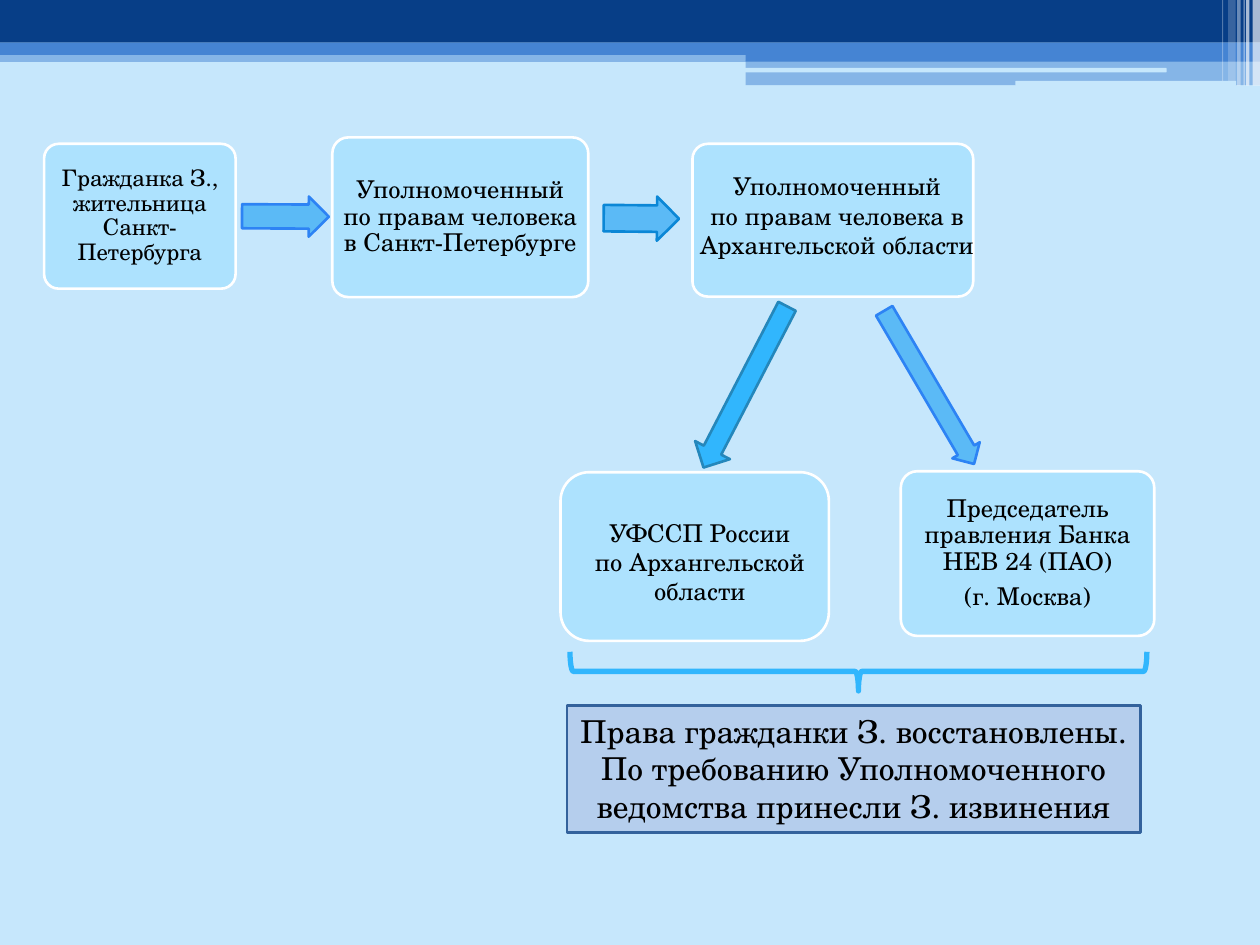
from lxml import etree
from pptx import Presentation
from pptx.dml.color import RGBColor
from pptx.enum.shapes import MSO_SHAPE as Shape
from pptx.enum.text import MSO_ANCHOR as Anchor, PP_ALIGN as Align
from pptx.oxml.ns import qn
from pptx.util import Cm, Pt

FONT = "TeX Gyre Schola"
BLACK = RGBColor(0x00, 0x00, 0x00)
WHITE = RGBColor(0xFF, 0xFF, 0xFF)
SKY = RGBColor(0xC6, 0xE7, 0xFC)
NAVY = RGBColor(0x07, 0x3E, 0x87)
BLUE = RGBColor(0x45, 0x84, 0xD3)
CARD = RGBColor(0xAD, 0xE2, 0xFE)
ARROW = RGBColor(0x5B, 0xBA, 0xF6)
ARROW_EDGE = RGBColor(0x2D, 0x83, 0xF4)
ARROW_EDGE_DARK = RGBColor(0x0B, 0x87, 0xD6)
CYAN = RGBColor(0x31, 0xB6, 0xFD)
CYAN_EDGE = RGBColor(0x24, 0x87, 0xBB)
RESULT = RGBColor(0xB5, 0xCE, 0xED)
RESULT_EDGE = RGBColor(0x33, 0x62, 0x9C)


def add_figure(slide, kind, box, fill=None, edge=None, weight=1.5, opacity=100):
    figure = slide.shapes.add_shape(kind, *map(Cm, box))
    figure.shadow.inherit = False
    if fill is None:
        figure.fill.background()
    else:
        figure.fill.solid()
        figure.fill.fore_color.rgb = fill
    if opacity < 100:
        color = figure.fill._xPr.find(qn("a:solidFill"))[0]
        etree.SubElement(color, qn("a:alpha")).set("val", str(opacity * 1000))
    if edge is None:
        figure.line.fill.background()
    else:
        figure.line.color.rgb = edge
        figure.line.width = Pt(weight)
    return figure


def write(frame, lines, size, margin=None, spacing=None, after=None, wrap=True):
    frame.text = "\n".join(lines)
    frame.word_wrap = wrap
    if margin is not None:
        frame.margin_left = frame.margin_right = Cm(margin)
        frame.margin_top = frame.margin_bottom = Cm(margin)
    for paragraph in frame.paragraphs:
        paragraph.alignment = Align.CENTER
        if spacing:
            paragraph.line_spacing = spacing
        if after:
            paragraph.space_after = Pt(after)
        for run in paragraph.runs:
            run.font.name = FONT
            run.font.size = Pt(size)
            run.font.color.rgb = BLACK


def add_header(slide, left, top, width):
    right = left + width
    bands = [
        (0, 1.02, width, 0.23, BLUE, 50),
        (0, 0, width, 0.86, NAVY, 100),
        (0, 0.86, width, 0.25, BLUE, 100),
        (15.03, 0.99, 10.37, 0.25, BLUE, 100),
        (15.03, 1.22, 10.37, 0.5, BLUE, 50),
    ]
    for x, y, w, h, color, opacity in bands:
        add_figure(slide, Shape.RECTANGLE, (left + x, top + y, w, h), color, opacity=opacity)
    for x, y, w, h in [(15.01, 1.37, 8.51, 0.09), (20.47, 1.63, 4.45, 0.1)]:
        add_figure(slide, Shape.ROUNDED_RECTANGLE, (left + x, top + y, w, h), SKY)
    stripes = [
        (0.15, 0.15, 1.73, 65), (0.28, 0.07, 1.73, 65), (0.33, 0.02, 1.73, 60),
        (0.46, 0.07, 1.73, 40), (0.64, 0.15, 1.63, 20), (0.76, 0.02, 1.63, 30),
    ]
    for inset, w, h, opacity in stripes:
        add_figure(slide, Shape.RECTANGLE, (right - inset, top, w, h), WHITE, opacity=opacity)


def add_card(slide, box, lines, size):
    card = add_figure(slide, Shape.ROUNDED_RECTANGLE, box, CARD, WHITE)
    card.adjustments[0] = 0.1
    card.text_frame.vertical_anchor = Anchor.MIDDLE
    write(card.text_frame, lines, size, margin=0.06, spacing=0.9, after=5)


def add_captioned_card(slide, box, caption_offset, caption_size, lines, rounding):
    card = add_figure(slide, Shape.ROUNDED_RECTANGLE, box, CARD, WHITE)
    card.adjustments[0] = rounding
    left, top = box[0] + caption_offset[0], box[1] + caption_offset[1]
    caption = slide.shapes.add_textbox(Cm(left), Cm(top), *map(Cm, caption_size))
    write(caption.text_frame, lines, 14)


def add_arrow(slide, kind, box, rotation, fill, edge, shaft):
    arrow = add_figure(slide, kind, box, fill, edge)
    arrow.adjustments[0] = shaft
    arrow.adjustments[1] = 0.5
    arrow.rotation = rotation


def add_outcome(slide, left, top, width):
    depth = 0.79
    brace_box = (left + (width - depth) / 2, top + (depth - width) / 2, depth, width)
    brace = add_figure(slide, Shape.RIGHT_BRACE, brace_box, edge=CYAN, weight=3)
    brace.rotation = 90
    outcome_box = (left - 0.06, top + 1.08, width - 0.07, 2.57)
    outcome = add_figure(slide, Shape.RECTANGLE, outcome_box, RESULT, RESULT_EDGE)
    outcome.text_frame.vertical_anchor = Anchor.TOP
    write(outcome.text_frame, [
        "Права гражданки З. восстановлены.",
        "По требованию Уполномоченного",
        "ведомства принесли З. извинения",
    ], 18, wrap=False)


def main():
    deck = Presentation()
    deck.slide_width, deck.slide_height = Cm(25.4), Cm(19.05)
    slide = deck.slides.add_slide(deck.slide_layouts[6])
    slide.background.fill.solid()
    slide.background.fill.fore_color.rgb = SKY

    add_header(slide, 0, 0, 25.4)

    add_card(slide, (0.89, 2.9, 3.86, 2.92), ["Гражданка З., жительница Санкт-Петербурга"], 13)
    add_card(slide, (6.7, 2.77, 5.16, 3.22),
             ["Уполномоченный по правам человека в Санкт-Петербурге"], 14)
    add_captioned_card(slide, (13.96, 2.9, 5.66, 3.08), (-0.12, 0.43), (6.07, 2.06),
                       ["Уполномоченный", "по правам человека в Архангельской области"], 0.1)
    add_captioned_card(slide, (11.3, 9.52, 5.41, 3.4), (0.41, 0.79), (4.8, 2.06),
                       ["УФССП России по Архангельской области"], 0.17)
    add_card(slide, (18.16, 9.5, 5.11, 3.32),
             ["Председатель правления Банка НЕВ 24 (ПАО)", "(г. Москва)"], 14)

    add_arrow(slide, Shape.RIGHT_ARROW, (4.88, 3.96, 1.75, 0.81), 0.3, ARROW, ARROW_EDGE, 0.6)
    add_arrow(slide, Shape.RIGHT_ARROW, (12.17, 3.96, 1.52, 0.89), 0.5,
              ARROW, ARROW_EDGE_DARK, 0.6)
    add_arrow(slide, Shape.RIGHT_ARROW, (16.94, 7.49, 3.58, 0.64), 59.6,
              ARROW, ARROW_EDGE, 0.6)
    add_arrow(slide, Shape.DOWN_ARROW, (14.63, 5.97, 0.79, 3.66), 27.4, CYAN, CYAN_EDGE, 0.5)

    add_outcome(slide, 11.49, 13.14, 11.63)
    deck.save("out.pptx")


if __name__ == "__main__":
    main()
